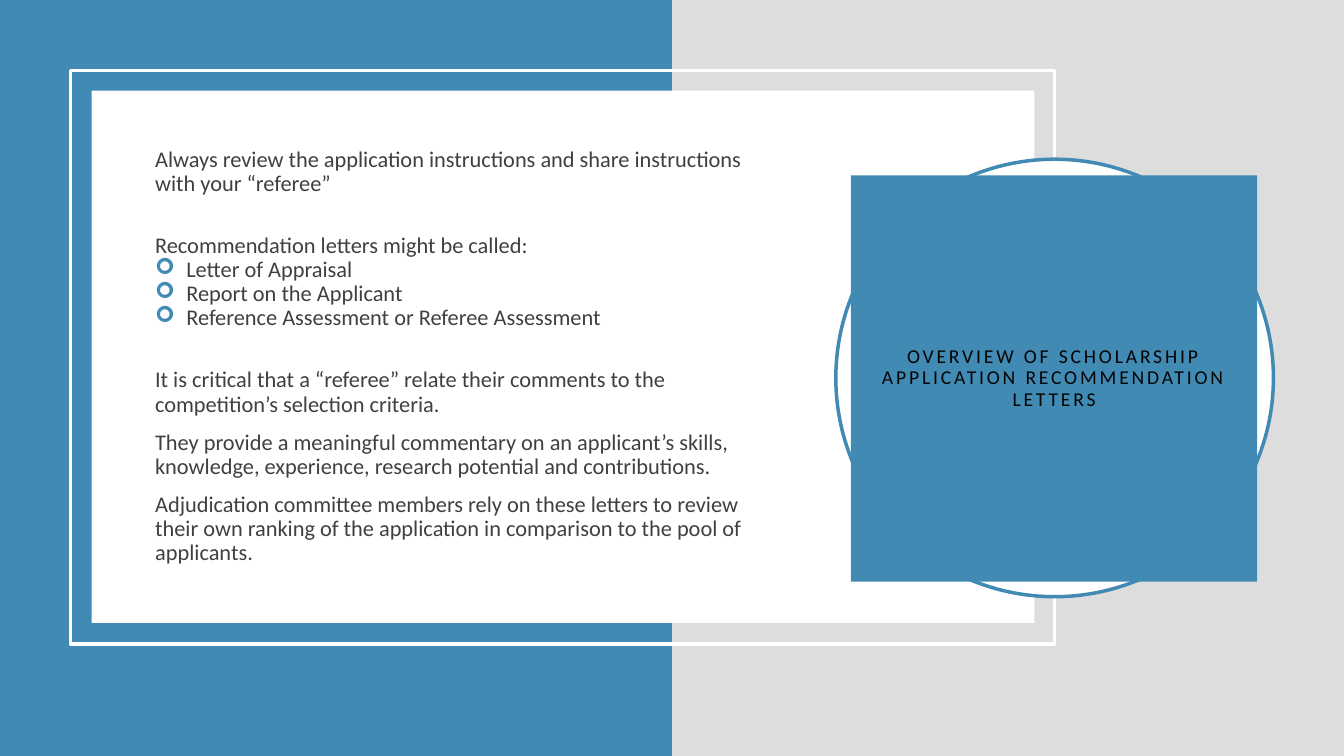
from lxml import etree
from pptx import Presentation
from pptx import util as u
from pptx.dml.color import RGBColor
from pptx.enum import shapes, text
from pptx.oxml.ns import qn

COLORS = {"blue": "418AB3", "grey": "DDDDDD", "white": "FFFFFF",
          "ink": "404040", "title": "040404"}
WIDTH, HEIGHT = 13.33, 7.5
RECT, OVAL = shapes.MSO_SHAPE.RECTANGLE, shapes.MSO_SHAPE.OVAL

deck = Presentation()
deck.slide_width, deck.slide_height = u.Inches(WIDTH), u.Inches(HEIGHT)
page = deck.slides.add_slide(deck.slide_layouts[6])
page.background.fill.solid()
page.background.fill.fore_color.rgb = RGBColor.from_string(COLORS["grey"])


def add_panel(kind, place, fill=None, line=None):
    panel = page.shapes.add_shape(kind, *[u.Inches(length) for length in place])
    panel.shadow.inherit = False
    for paint, color in ((panel.fill, fill), (panel.line.fill, line)):
        if color:
            paint.solid()
            paint.fore_color.rgb = RGBColor.from_string(COLORS[color])
        else:
            paint.background()
    if line:
        panel.line.width = u.Pt(2.5)
    return panel


def add_text(para, words, size, color):
    span = para.add_run()
    span.text = words
    for name, value in {"name": "Calibri", "size": u.Pt(size)}.items():
        setattr(span.font, name, value)
    span.font.color.rgb = RGBColor.from_string(COLORS[color])
    para.line_spacing = 0.9
    return span


# Blue left half, white frame, white card and ring
add_panel(RECT, (0, 0, WIDTH / 2, HEIGHT), fill="blue")
add_panel(RECT, (0.7, 0.7, 9.76, 5.69), line="white")
add_panel(RECT, (0.91, 0.9, 9.35, 5.28), fill="white")
add_panel(OVAL, (8.29, 1.58, 4.34, 4.34), fill="white", line="blue")

# Title square
title = add_panel(RECT, (8.44, 1.74, 4.03, 4.03), fill="blue").text_frame
title_format = {"word_wrap": True, "vertical_anchor": text.MSO_ANCHOR.MIDDLE}
for side in ("left", "right", "top", "bottom"):
    title_format["margin_" + side] = u.Inches(0.2)
for name, value in title_format.items():
    setattr(title, name, value)
title.paragraphs[0].alignment = text.PP_ALIGN.CENTER
span = add_text(title.paragraphs[0],
                "OVERVIEW OF SCHOLARSHIP APPLICATION RECOMMENDATION LETTERS", 14, "title")
span.font._element.set("spc", "200")

# Body: space before in points, bulleted or not, wording
BODY = [
    (0, False, "Always review the application instructions and share instructions "
               "with your “referee”"),
    (27, False, "Recommendation letters might be called:"),
    (0, True, "Letter of Appraisal"),
    (0, True, "Report on the Applicant"),
    (0, True, "Reference Assessment or Referee Assessment"),
    (27, False, "It is critical that a “referee” relate their comments to the "
                "competition’s selection criteria."),
    (10, False, "They provide a meaningful commentary on an applicant’s skills, "
                "knowledge, experience, research potential and contributions."),
    (10, False, "Adjudication committee members rely on these letters to review "
                "their own ranking of the application in comparison to the pool of "
                "applicants."),
]
box = page.shapes.add_textbox(*[u.Inches(length) for length in (1.44, 1.4, 6.41, 4.28)])
body = box.text_frame
body.word_wrap = True
body.vertical_anchor = text.MSO_ANCHOR.MIDDLE
for number, (gap, bulleted, words) in enumerate(BODY):
    para = body.add_paragraph() if number else body.paragraphs[0]
    add_text(para, words, 16, "ink")
    para.space_before = u.Pt(gap)
    if bulleted:
        layout = para._p.get_or_add_pPr()
        indent = u.Inches(0.31)
        layout.set("marL", str(indent))
        layout.set("indent", str(-indent))
        bullet_color = etree.SubElement(layout, qn("a:buClr"))
        etree.SubElement(bullet_color, qn("a:srgbClr"), val=COLORS["blue"])
        etree.SubElement(layout, qn("a:buFont"), typeface="Wingdings")
        etree.SubElement(layout, qn("a:buChar"), char="➢")

deck.save("out.pptx")
